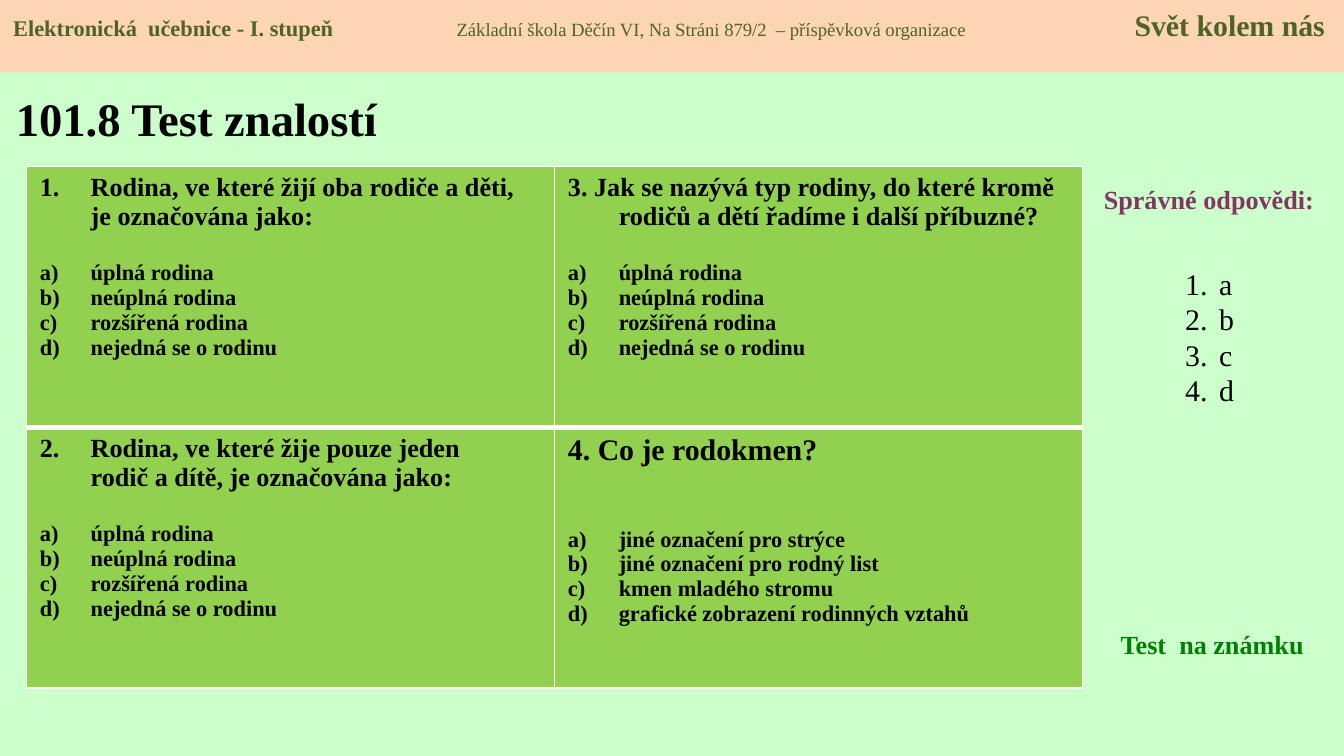
from dataclasses import dataclass

from lxml import etree
from pptx import Presentation
from pptx.dml.color import RGBColor
from pptx.enum.shapes import MSO_SHAPE
from pptx.enum.text import MSO_ANCHOR, PP_ALIGN
from pptx.oxml.ns import qn
from pptx.util import Cm, Pt

RECTANGLE = MSO_SHAPE.RECTANGLE
TOP, MIDDLE = MSO_ANCHOR.TOP, MSO_ANCHOR.MIDDLE
LEFT, CENTER = PP_ALIGN.LEFT, PP_ALIGN.CENTER

FONT = "Times New Roman"
MINT = RGBColor(0xCC, 0xFF, 0xCC)
PEACH = RGBColor(0xFC, 0xD5, 0xB5)
LIME = RGBColor(0x92, 0xD0, 0x50)
OLIVE = RGBColor(0x4F, 0x62, 0x28)
PURPLE = RGBColor(0x81, 0x37, 0x63)
GREEN = RGBColor(0x00, 0x80, 0x00)
BLACK = RGBColor(0x00, 0x00, 0x00)

NUMBERS, LETTERS = "arabicPeriod", "alphaLcParenR"
CELL_INDENT = Cm(0.96)
LIST_INDENT = Cm(0.64)
COLUMN_WIDTH, ROW_HEIGHT = Cm(9.98), Cm(4.93)
THIN, THICK = Pt(1), Pt(3)


@dataclass(frozen=True)
class Label:
    text: str
    left: float
    top: float
    width: float
    height: float
    size: int
    color: RGBColor
    align: PP_ALIGN = LEFT
    anchor: MSO_ANCHOR = TOP


@dataclass(frozen=True)
class Question:
    heading: str
    answers: tuple[str, ...]
    number: int = 0
    second_line: str = ""
    size: int = 14
    gap: int = 16


LABELS = (
    Label("101.8 Test znalostí", 0.05, 1.4, 8.1, 1.65, 25, BLACK, anchor=MIDDLE),
    Label("Správné odpovědi:", 20.45, 3.35, 4.8, 0.86, 14, PURPLE, align=CENTER),
    Label("Test  na známku", 20.93, 11.76, 3.99, 0.86, 14, GREEN),
)
HEADER = (
    ("Elektronická  učebnice - I. stupeň", 12, True),
    ("\tZákladní škola Děčín VI, Na Stráni 879/2  – příspěvková organizace", 10, False),
    ("\tSvět kolem nás", 16, True),
)
HEADER_TABS = ((Cm(8.38), "l"), (Cm(24.79), "r"))
FAMILY_ANSWERS = ("úplná rodina", "neúplná rodina", "rozšířená rodina", "nejedná se o rodinu")
KINSHIP_ANSWERS = (
    "jiné označení pro strýce",
    "jiné označení pro rodný list",
    "kmen mladého stromu",
    "grafické zobrazení rodinných vztahů",
)
QUESTIONS = (
    (
        Question("Rodina, ve které žijí oba rodiče a děti, je označována jako:", FAMILY_ANSWERS, 1),
        Question(
            "3. Jak se nazývá typ rodiny, do které kromě rodičů a dětí řadíme i další příbuzné?",
            FAMILY_ANSWERS,
        ),
    ),
    (
        Question(
            "Rodina, ve které žije pouze jeden",
            FAMILY_ANSWERS,
            2,
            "rodič a dítě, je označována jako:",
        ),
        Question("4. Co je rodokmen?", KINSHIP_ANSWERS, size=16, gap=32),
    ),
)
SOLUTIONS = ("a", "b", "c", "d")


def add_span(para, text: str, size: int, color: RGBColor, bold: bool = True) -> None:
    span = para.add_run()
    span.text = text
    for name, value in {"name": FONT, "size": Pt(size), "bold": bold}.items():
        setattr(span.font, name, value)
    span.font.color.rgb = color


def next_para(frame):
    first = frame.paragraphs[0]
    return first if not first.runs else frame.add_paragraph()


def set_indent(para, left: int, first: int) -> None:
    properties = para._p.get_or_add_pPr()
    properties.set("marL", str(left))
    properties.set("indent", str(first))


def add_numbering(para, scheme: str, start: int = 1) -> None:
    numbering = etree.SubElement(para._p.get_or_add_pPr(), qn("a:buAutoNum"), type=scheme)
    if start > 1:
        numbering.set("startAt", str(start))


def add_box(page, left: float, top: float, width: float, height: float):
    box = page.shapes.add_textbox(Cm(left), Cm(top), Cm(width), Cm(height))
    box.text_frame.word_wrap = True
    return box


def draw_label(page, label: Label) -> None:
    frame = add_box(page, label.left, label.top, label.width, label.height).text_frame
    frame.vertical_anchor = label.anchor
    para = next_para(frame)
    para.alignment = label.align
    add_span(para, label.text, label.size, label.color)


def draw_header(page, width: int) -> None:
    band = page.shapes.add_shape(RECTANGLE, 0, 0, width, Cm(1.37))
    band.shadow.inherit = False
    band.fill.solid()
    band.fill.fore_color.rgb = PEACH
    band.line.fill.background()
    frame = band.text_frame
    for name, value in {"word_wrap": True, "vertical_anchor": TOP, "margin_right": 0}.items():
        setattr(frame, name, value)
    para = next_para(frame)
    para.alignment = LEFT
    stops = etree.SubElement(para._p.get_or_add_pPr(), qn("a:tabLst"))
    for position, align in HEADER_TABS:
        etree.SubElement(stops, qn("a:tab"), pos=str(position), algn=align)
    for text, size, bold in HEADER:
        add_span(para, text, size, OLIVE, bold)


def add_borders(cell, widths: dict[str, int]) -> None:
    properties = cell._tc.get_or_add_tcPr()
    for side, width in widths.items():
        line = etree.SubElement(properties, qn(f"a:{side}"), w=str(width))
        fill = etree.SubElement(line, qn("a:solidFill"))
        etree.SubElement(fill, qn("a:srgbClr"), val="FFFFFF")


def fill_cell(cell, question: Question) -> None:
    cell.fill.solid()
    cell.fill.fore_color.rgb = LIME
    frame = cell.text_frame
    heading = next_para(frame)
    set_indent(heading, CELL_INDENT, -CELL_INDENT)
    if question.number:
        add_numbering(heading, NUMBERS, question.number)
    add_span(heading, question.heading, question.size, BLACK)
    if question.second_line:
        para = next_para(frame)
        set_indent(para, CELL_INDENT, 0)
        add_span(para, question.second_line, question.size, BLACK)
    for index, answer in enumerate(question.answers):
        para = next_para(frame)
        set_indent(para, CELL_INDENT, -CELL_INDENT)
        para.space_before = Pt(0 if index else question.gap)
        add_numbering(para, LETTERS)
        add_span(para, answer, 12, BLACK)


def draw_questions(page) -> None:
    table = page.shapes.add_table(
        2, 2, Cm(0.5), Cm(3.15), 2 * COLUMN_WIDTH, 2 * ROW_HEIGHT
    ).table
    table.first_row = table.horz_banding = False
    for row, questions in enumerate(QUESTIONS):
        table.rows[row].height = ROW_HEIGHT
        top, bottom = (THICK, THIN) if row else (THIN, THICK)
        for column, question in enumerate(questions):
            table.columns[column].width = COLUMN_WIDTH
            cell = table.cell(row, column)
            add_borders(cell, {"lnL": THIN, "lnR": THIN, "lnT": top, "lnB": bottom})
            fill_cell(cell, question)


def draw_solutions(page) -> None:
    frame = add_box(page, 22.15, 4.9, 1.4, 4.35).text_frame
    for solution in SOLUTIONS:
        para = next_para(frame)
        set_indent(para, LIST_INDENT, -LIST_INDENT)
        para.line_spacing = Pt(19)
        add_numbering(para, NUMBERS)
        add_span(para, solution, 16, BLACK, False)


def main() -> None:
    deck = Presentation()
    deck.slide_width, deck.slide_height = Cm(25.4), Cm(14.29)
    page = deck.slides.add_slide(deck.slide_layouts[6])
    page.background.fill.solid()
    page.background.fill.fore_color.rgb = MINT
    draw_header(page, deck.slide_width)
    draw_questions(page)
    draw_solutions(page)
    for label in LABELS:
        draw_label(page, label)
    deck.save("out.pptx")


if __name__ == "__main__":
    main()
